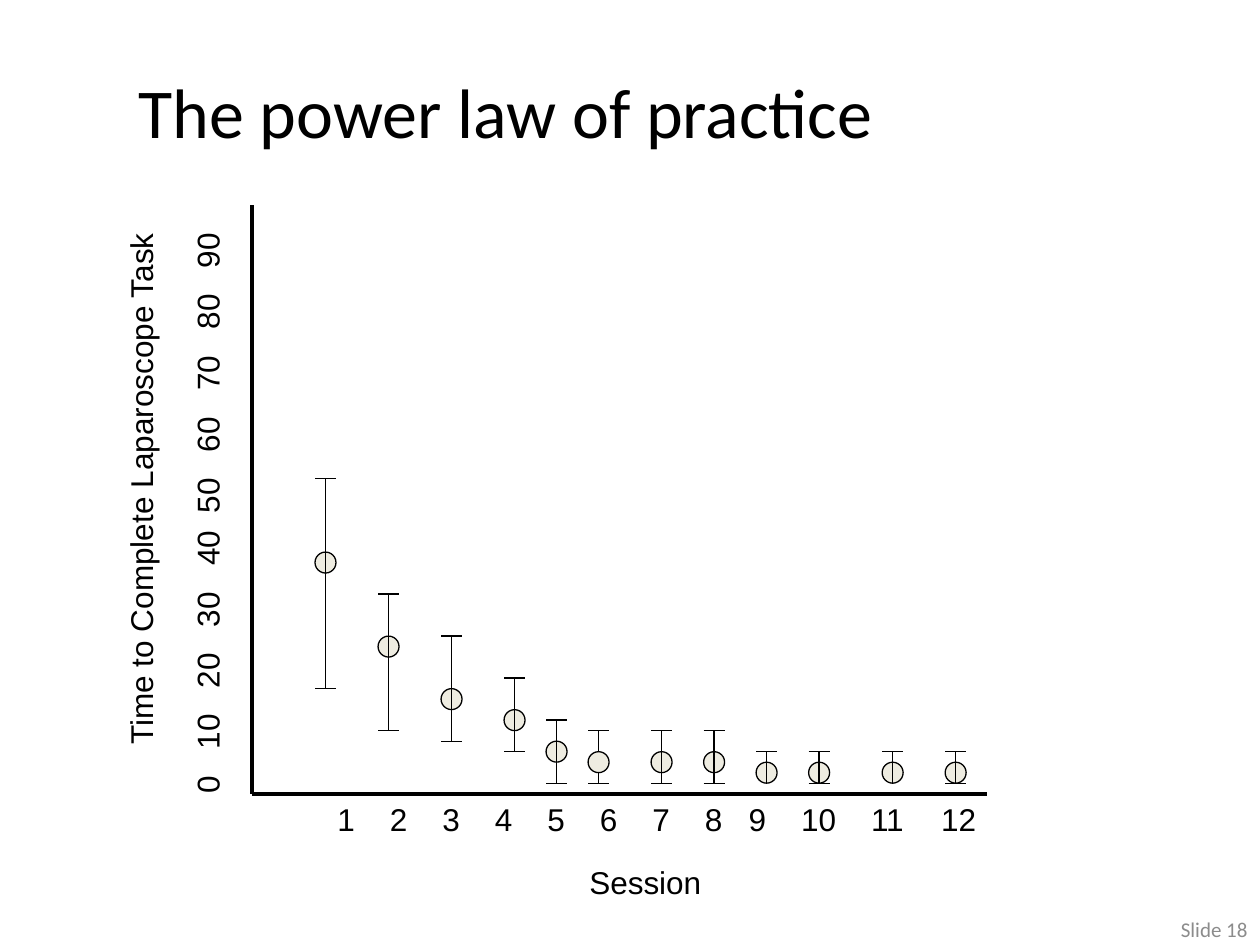
from lxml import etree
from pptx import Presentation
from pptx import util as u
from pptx.dml.color import RGBColor
from pptx.enum import shapes, text
from pptx.oxml.ns import qn

HUES = {"ink": "000000", "dot": "EEECE1", "page": "8C8C8C"}

# Session: x, mean, low end, high end, low cap (None = no cap), in grid units
MARKS = [
    (7, 22, 10, 30, 10),
    (13, 14, 6, 19, 6),
    (19, 9, 5, 15, 5),
    (25, 7, 4, 11, 4),
    (29, 4, 1, 7, 1),
    (33, 3, 1, 6, 1),
    (39, 3, 1, 6, 1),
    (44, 3, 1, 6, 1),
    (49, 2, 1, 4, 0),
    (54, 2, 1, 4, 1),
    (61, 2, 1, 4, None),
    (67, 2, 1, 4, 1),
]
FRONT = MARKS[5]  # the one dot that lies over its bar
COLS, ROWS = 70, 56

# Tab stops in points from the start of each scale
X_TABS = [*range(30, 211, 30), 235, 265, 305, 345]
Y_TABS = [25, 60, 95, 130, 160, 195, 230, 265, 300]


def hue(name):
    return RGBColor.from_string(HUES[name])


def write(parts, words, left, top, width, height, size=18, font="Arial",
          ink="ink", align="LEFT", anchor="TOP", turn=0, tabs=()):
    """Add a text box; tabs are left tab stops in points."""
    box = parts.add_textbox(u.Cm(left), u.Cm(top), u.Cm(width), u.Cm(height))
    box.rotation = turn
    frame = box.text_frame
    frame.word_wrap = True
    frame.vertical_anchor = text.MSO_ANCHOR[anchor]
    para = frame.paragraphs[0]
    para.alignment = text.PP_ALIGN[align]
    run = para.add_run()
    run.text = words
    run.font.size, run.font.name = u.Pt(size), font
    run.font.color.rgb = hue(ink)
    if tabs:
        stops = etree.SubElement(para._p.get_or_add_pPr(), qn("a:tabLst"))
        for stop in tabs:
            etree.SubElement(stops, qn("a:tab"), pos=str(u.Pt(stop)), algn="l")


def upright(parts, words, mid_x, mid_y, length, depth, **style):
    """Add text that reads from bottom to top, centred on a point."""
    write(parts, words, mid_x - length / 2, mid_y - depth / 2,
          length, depth, turn=270, **style)


def rule(parts, x1, y1, x2, y2, width=0.75):
    line = parts.add_connector(shapes.MSO_CONNECTOR.STRAIGHT,
                               u.Cm(x1), u.Cm(y1), u.Cm(x2), u.Cm(y2))
    line.line.color.rgb = hue("ink")
    line.line.width = u.Pt(width)
    etree.SubElement(line._element.spPr, qn("a:effectLst"))


def disc(parts, x, y, size):
    dot = parts.add_shape(shapes.MSO_SHAPE.OVAL, u.Cm(x - size / 2),
                          u.Cm(y - size / 2), u.Cm(size), u.Cm(size))
    dot.shadow.inherit = False
    dot.fill.solid()
    dot.fill.fore_color.rgb = hue("dot")
    dot.line.color.rgb = hue("ink")
    dot.line.width = u.Pt(0.75)


def plot(parts, left, top, width, height):
    """Draw axes, scales, dots and error bars; the box is the axis area."""
    step, rise = width / COLS, height / ROWS
    base = top + height

    def spot(x, y):
        return left + x * step, base - y * rise

    def stroke(x1, y1, x2, y2, **style):
        rule(parts, *spot(x1, y1), *spot(x2, y2), **style)

    stroke(0, ROWS, 0, 0, width=2.25)
    stroke(0, 0, COLS, 0, width=2.25)

    upright(parts, "Time to Complete Laparoscope Task",
            left - 2.24, top + 5.66, 10.92, 1.02)
    write(parts, "Session", left + 6.55, base + 1.27, 2.77, 1.02)
    write(parts, "\t".join(map(str, range(1, 13))),
          left + 1.47, base, 13.39, 1.02, tabs=X_TABS)
    upright(parts, "\t".join(map(str, range(0, 91, 10))),
            left - 0.76, top + 5.9, 12.4, 1.3, tabs=Y_TABS)

    def dots(marks):
        for x, mean, *_ in marks:
            disc(parts, *spot(x, mean), 2 * step)

    dots(mark for mark in MARKS if mark != FRONT)
    for x, _, low, high, cap in MARKS:
        stroke(x, low, x, high)
        for end in (cap, high):
            if end is not None:
                stroke(x - 1, end, x + 1, end)
    dots([FRONT])


def main():
    deck = Presentation()
    deck.slide_width, deck.slide_height = u.Cm(25.4), u.Cm(19.05)
    slide = deck.slides.add_slide(deck.slide_layouts[6])
    write(slide.shapes, "Slide 18", 21.79, 18.31, 3.61, 0.84, size=12,
          font="Calibri", ink="page", align="RIGHT", anchor="MIDDLE")
    write(slide.shapes, "The power law of practice", 2.54, 0.64, 21.18, 3.18,
          size=40, font="Calibri", anchor="MIDDLE")
    group = slide.shapes.add_group_shape()
    plot(group.shapes, 5.08, 4.14, 14.82, 11.86)
    deck.save("out.pptx")


if __name__ == "__main__":
    main()
